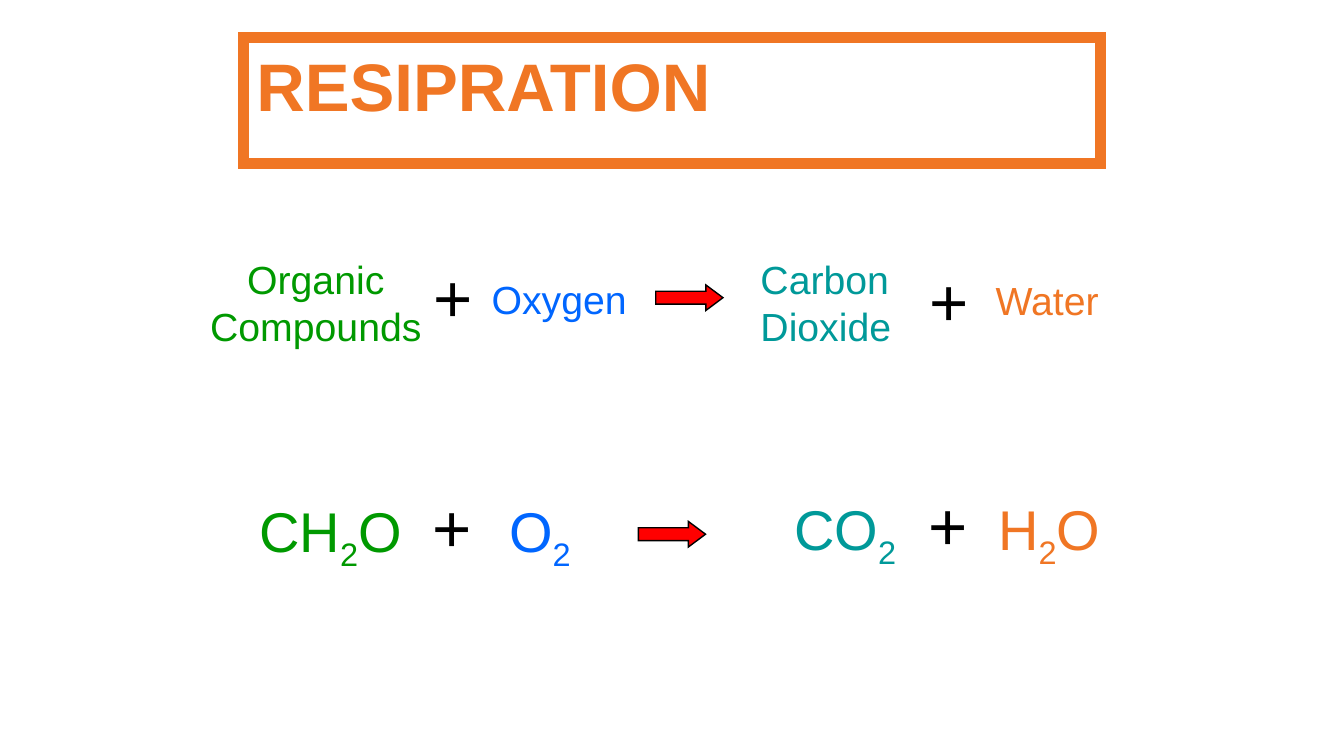
from typing import NamedTuple

from lxml.etree import SubElement
from pptx import Presentation
from pptx.dml.color import RGBColor
from pptx.enum.shapes import MSO_SHAPE
from pptx.enum.text import MSO_ANCHOR, MSO_AUTO_SIZE, PP_ALIGN
from pptx.oxml.ns import qn
from pptx.util import Inches, Pt

BLACK, RED, ORANGE = "000000", "FF0000", "F07624"
GREEN, BLUE, TEAL = "009900", "0066FF", "009999"


class Run(NamedTuple):
    text: str
    color: str
    size: float = 30
    sub: bool = False
    bold: bool = False


class Label(NamedTuple):
    text: str
    color: str
    left: float
    top: float
    width: float
    height: float
    size: float = 21
    align: PP_ALIGN = PP_ALIGN.LEFT


class Formula(NamedTuple):
    runs: list[Run]
    left: float
    top: float
    width: float
    tabs: tuple[float, ...]


PLUS = Run("\t+\t", BLACK, 36)
LABELS = [
    Label("Organic\nCompounds", GREEN, 1.46, 1.85, 1.78, 0.81, align=PP_ALIGN.CENTER),
    Label("+", BLACK, 3.13, 1.85, 0.5, 0.71, 36),
    Label("Oxygen", BLUE, 3.56, 2, 1.22, 0.45),
    Label("Carbon\nDioxide", TEAL, 5.56, 1.85, 1.18, 0.81),
    Label("+", BLACK, 6.82, 1.88, 0.5, 0.71, 36),
    Label("Water", ORANGE, 7.31, 2.01, 0.98, 0.45),
]
FORMULAS = [
    Formula([Run("CH", GREEN), Run("2", GREEN, sub=True), Run("O", GREEN), PLUS,
             Run("O", BLUE), Run("2", BLUE, sub=True)],
            1.83, 3.56, 2.59, (1.29, 1.86)),
    Formula([Run("CO", TEAL), Run("2", TEAL, sub=True), PLUS,
             Run("H", ORANGE), Run("2", ORANGE, sub=True), Run("O", ORANGE)],
            5.81, 3.55, 2.54, (1, 1.52)),
]
ARROWS = [(4.88, 2.12), (4.75, 3.88)]


def paint(fill, color: str) -> None:
    """Give a fill one solid colour."""
    fill.solid()
    fill.fore_color.rgb = RGBColor.from_string(color)


def write(frame, lines: list[list[Run]], *, align: PP_ALIGN = PP_ALIGN.LEFT,
          wrap: bool = False, tabs: tuple[float, ...] = ()) -> None:
    """Fill a text frame with lines of styled runs."""
    frame.word_wrap = wrap
    frame.vertical_anchor = MSO_ANCHOR.TOP
    for index, runs in enumerate(lines):
        para = frame.add_paragraph() if index else frame.paragraphs[0]
        para.alignment = align
        if tabs:
            stops = SubElement(para._p.get_or_add_pPr(), qn("a:tabLst"))
            for stop in tabs:
                SubElement(stops, qn("a:tab"), pos=str(Inches(stop)), algn="l")
        for item in runs:
            run = para.add_run()
            run.text = item.text
            run.font.name = "Arial"
            run.font.size = Pt(item.size)
            run.font.bold = item.bold
            paint(run.font.fill, item.color)
            if item.sub:
                run._r.get_or_add_rPr().set("baseline", "-25000")


def add_box(slide, left: float, top: float, width: float, height: float):
    """Add a text box that grows and return its frame."""
    box = slide.shapes.add_textbox(Inches(left), Inches(top), Inches(width), Inches(height))
    box.text_frame.auto_size = MSO_AUTO_SIZE.SHAPE_TO_FIT_TEXT
    return box.text_frame


def add_shape(slide, kind: MSO_SHAPE, left: float, top: float, width: float,
              height: float, color: str, weight: float):
    """Add an outlined shape with sharp corners."""
    shape = slide.shapes.add_shape(kind, Inches(left), Inches(top),
                                   Inches(width), Inches(height))
    shape.shadow.inherit = False
    paint(shape.line.fill, color)
    shape.line.width = Pt(weight)
    SubElement(shape.line._get_or_add_ln(), qn("a:miter"), lim="800000")
    return shape


def add_title(slide, text: str) -> None:
    """Draw the framed title."""
    box = add_shape(slide, MSO_SHAPE.RECTANGLE, 1.81, 0.28, 6.38, 0.94, ORANGE, 6)
    box.fill.background()
    box.text_frame.margin_left = Inches(0.1)
    box.text_frame.margin_top = Inches(0.05)
    write(box.text_frame, [[Run(text, ORANGE, 36, bold=True)]], wrap=True)


def add_label(slide, label: Label) -> None:
    """Draw one word or sign of the word equation."""
    frame = add_box(slide, label.left, label.top, label.width, label.height)
    lines = [[Run(line, label.color, label.size)] for line in label.text.split("\n")]
    write(frame, lines, align=label.align)


def add_formula(slide, side: Formula) -> None:
    """Draw one side of the chemical equation."""
    frame = add_box(slide, side.left, side.top, side.width, 0.71)
    write(frame, [side.runs], wrap=True, tabs=side.tabs)


def add_arrow(slide, left: float, top: float) -> None:
    """Draw a red arrow between two sides."""
    arrow = add_shape(slide, MSO_SHAPE.RIGHT_ARROW, left, top, 0.5, 0.19, BLACK, 0.75)
    arrow.adjustments[0] = 0.5
    arrow.adjustments[1] = 0.67
    paint(arrow.fill, RED)


def main() -> None:
    """Build and save the slide."""
    deck = Presentation()
    deck.slide_width = Inches(10)
    deck.slide_height = deck.slide_width * 9 // 16
    slide = deck.slides.add_slide(deck.slide_layouts[6])
    add_title(slide, "RESIPRATION")
    for label in LABELS:
        add_label(slide, label)
    for side in FORMULAS:
        add_formula(slide, side)
    for left, top in ARROWS:
        add_arrow(slide, left, top)
    deck.save("out.pptx")


if __name__ == "__main__":
    main()
